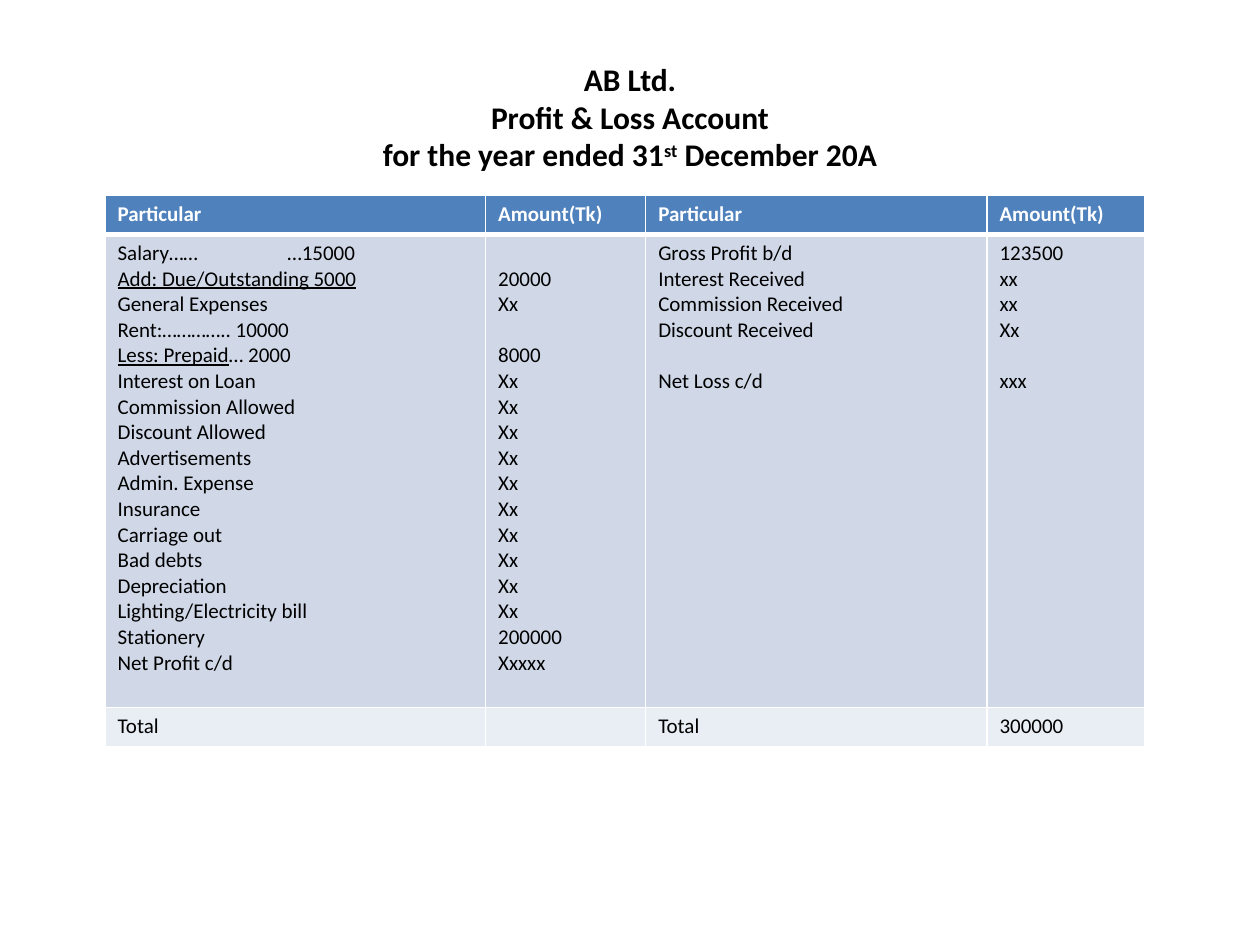
from dataclasses import dataclass
from typing import Any

from lxml import etree
from pptx import Presentation
from pptx import util as u
from pptx.dml import color
from pptx.enum import text
from pptx.oxml import ns

COLORS = {
    "header": "4F81BD",
    "body": "D0D8E8",
    "total": "E9EDF4",
    "rule": "FFFFFF",
    "light": "FFFFFF",
    "dark": "000000",
}
FONT = "Calibri"
ENTRY_SIZE = 12
LINE = 14.64
COLUMN_WIDTHS = (217.5, 91.5, 195, 90)
ROW_HEIGHTS = (22.3, 270.5, 22.3)
TAB_STOP = 97


@dataclass
class Entry:
    label: str
    underlined: str = ""
    skip: int = 0


@dataclass
class Band:
    cells: list[list[Entry]]
    fill: str
    ink: str
    bold: bool = False
    bottom_rule: int = 1


def entries(*labels: str) -> list[Entry]:
    return [Entry(label) for label in labels]


EXPENSES = [
    Entry("Salary……\t…15000"),
    Entry("", "Add: Due/Outstanding 5000"),
    *entries("General Expenses", "Rent:………….. 10000"),
    Entry("… 2000", "Less: Prepaid"),
    *entries(
        "Interest on Loan", "Commission Allowed", "Discount Allowed",
        "Advertisements", "Admin. Expense", "Insurance", "Carriage out",
        "Bad debts", "Depreciation", "Lighting/Electricity bill",
        "Stationery", "Net Profit c/d",
    ),
]
EXPENSE_AMOUNTS = [
    Entry("20000", skip=1), Entry("Xx"), Entry("8000", skip=1),
    *entries(*["Xx"] * 10, "200000", "Xxxxx"),
]
INCOMES = [
    *entries("Gross Profit b/d", "Interest Received",
             "Commission Received", "Discount Received"),
    Entry("Net Loss c/d", skip=1),
]
INCOME_AMOUNTS = [*entries("123500", "xx", "xx", "Xx"), Entry("xxx", skip=1)]

HEADINGS = [entries("Particular"), entries("Amount(Tk)")]
BANDS = [
    Band(HEADINGS * 2, "header", "light", bold=True, bottom_rule=3),
    Band([EXPENSES, EXPENSE_AMOUNTS, INCOMES, INCOME_AMOUNTS], "body", "dark"),
    Band([entries("Total"), [], entries("Total"), entries("300000")], "total", "dark"),
]


def rgb(name: str) -> color.RGBColor:
    return color.RGBColor.from_string(COLORS[name])


def apply(target: Any, formats: dict[str, Any]) -> None:
    for attribute, value in formats.items():
        setattr(target, attribute, value)


def add_words(paragraph: Any, words: str, ink: str, **formats: Any) -> Any:
    run = paragraph.add_run()
    run.text = words
    apply(run.font, {"name": FONT, **formats})
    run.font.color.rgb = rgb(ink)
    return run


def add_rules(cell: Any, bottom: int) -> None:
    properties = cell._tc.get_or_add_tcPr()
    widths = {"lnL": 1, "lnR": 1, "lnT": 1, "lnB": bottom}
    for position, (side, width) in enumerate(widths.items()):
        rule = etree.Element(ns.qn(f"a:{side}"), w=str(u.Pt(width)))
        fill = etree.SubElement(rule, ns.qn("a:solidFill"))
        etree.SubElement(fill, ns.qn("a:srgbClr"), val=COLORS["rule"])
        properties.insert(position, rule)


def add_tab_stop(paragraph: Any) -> None:
    stops = etree.SubElement(paragraph._p.get_or_add_pPr(), ns.qn("a:tabLst"))
    etree.SubElement(stops, ns.qn("a:tab"), pos=str(u.Pt(TAB_STOP)), algn="l")


def fill_cell(cell: Any, content: list[Entry], band: Band) -> None:
    cell.fill.solid()
    cell.fill.fore_color.rgb = rgb(band.fill)
    add_rules(cell, band.bottom_rule)
    frame = cell.text_frame
    if not content:
        etree.SubElement(frame.paragraphs[0]._p, ns.qn("a:endParaRPr"),
                         sz=str(ENTRY_SIZE * 100))
    for index, entry in enumerate(content):
        paragraph = frame.add_paragraph() if index else frame.paragraphs[0]
        if entry.skip and index:
            paragraph.space_before = u.Pt(entry.skip * LINE)
        elif entry.skip:
            cell.margin_top = u.Pt(3.6 + entry.skip * LINE)
        if "\t" in entry.label:
            add_tab_stop(paragraph)
        for words, underline in ((entry.underlined, True), (entry.label, False)):
            if words:
                add_words(paragraph, words, band.ink, size=u.Pt(ENTRY_SIZE),
                          bold=band.bold, underline=underline)


def add_heading(slide: Any) -> None:
    heading = slide.shapes.title
    apply(heading, {"left": u.Pt(36), "top": u.Pt(21.6),
                    "width": u.Pt(648), "height": u.Pt(90)})
    frame = heading.text_frame
    apply(frame, {"word_wrap": True, "vertical_anchor": text.MSO_ANCHOR.MIDDLE})
    paragraph = frame.paragraphs[0]
    paragraph.alignment = text.PP_ALIGN.CENTER
    style = {"ink": "dark", "size": u.Pt(18), "bold": True}
    for line in ("AB Ltd.", "Profit & Loss Account"):
        add_words(paragraph, line, **style)
        paragraph.add_line_break()
    add_words(paragraph, "for the year ended 31", **style)
    ordinal = add_words(paragraph, "st", **style)
    ordinal.font._element.set("baseline", "30000")
    add_words(paragraph, " December 20A", **style)
    for line_break in paragraph._p.findall(ns.qn("a:br")):
        etree.SubElement(line_break, ns.qn("a:rPr"), sz="1800", b="1")


def add_account(slide: Any) -> None:
    account = slide.shapes.add_table(
        len(BANDS), len(COLUMN_WIDTHS), u.Pt(60), u.Pt(111.6),
        u.Pt(sum(COLUMN_WIDTHS)), u.Pt(sum(ROW_HEIGHTS)),
    ).table
    apply(account, {"first_row": False, "horz_banding": False})
    for column, width in zip(account.columns, COLUMN_WIDTHS):
        column.width = u.Pt(width)
    for row, height, band in zip(account.rows, ROW_HEIGHTS, BANDS):
        row.height = u.Pt(height)
        for cell, content in zip(row.cells, band.cells):
            fill_cell(cell, content, band)


def main() -> None:
    deck = Presentation()
    apply(deck, {"slide_width": u.Pt(720), "slide_height": u.Pt(540)})
    slide = deck.slides.add_slide(deck.slide_layouts[5])
    add_heading(slide)
    add_account(slide)
    deck.save("out.pptx")


if __name__ == "__main__":
    main()
